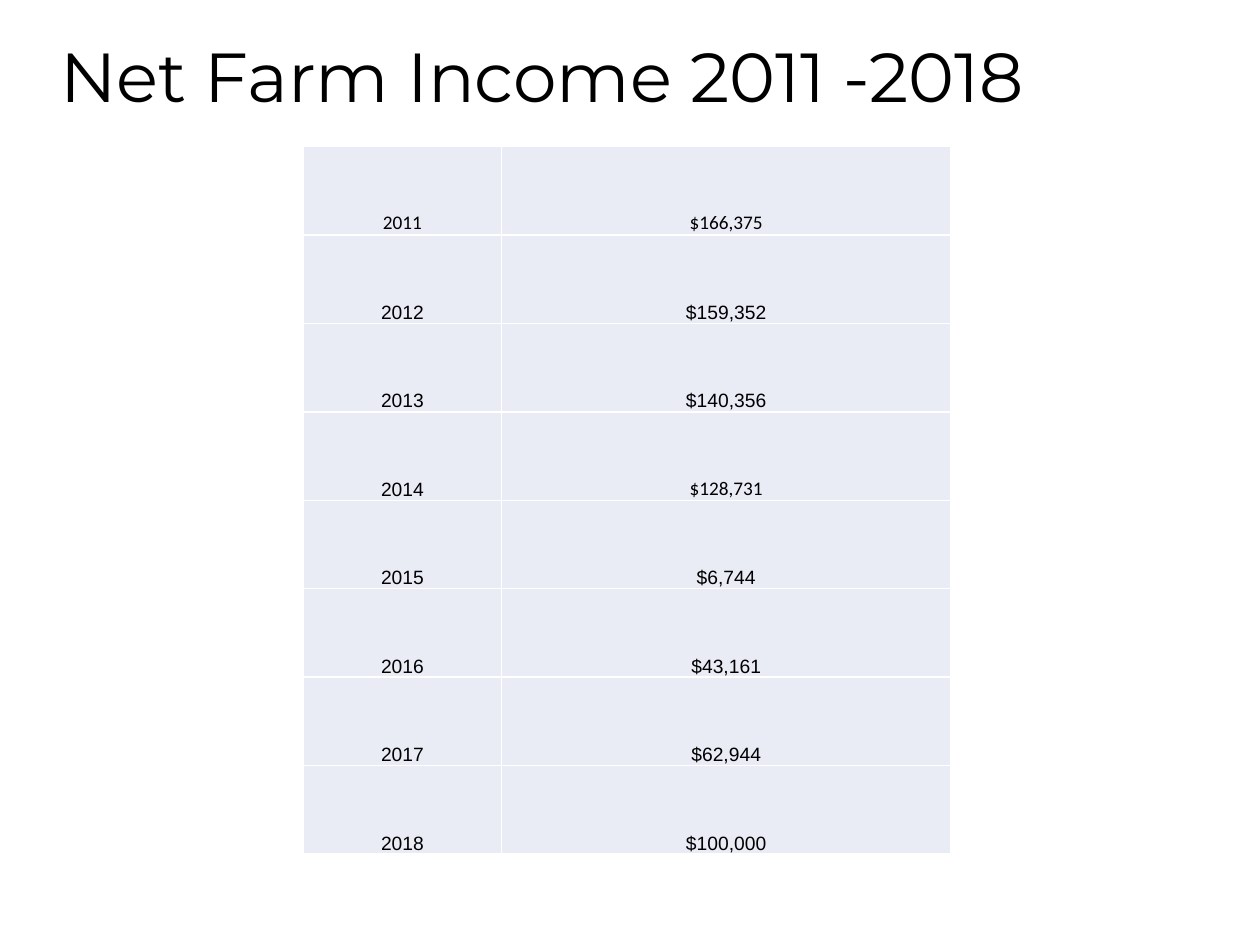
import pptx
import pptx.util
import pptx.dml.color
import pptx.enum.text
import pptx.oxml
import pptx.oxml.ns

Pt = pptx.util.Pt
enum = pptx.enum.text

title = "Net Farm Income 2011 -2018"
rows = [
    ("2011", "$166,375"),
    ("2012", "$159,352"),
    ("2013", "$140,356"),
    ("2014", "$128,731"),
    ("2015", "$6,744"),
    ("2016", "$43,161"),
    ("2017", "$62,944"),
    ("2018", "$100,000"),
]
light = {"2011", "$166,375", "$128,731"}
widths = [113, 257]
high = 50.55
colors = {"text": "000000", "cell": "E9EBF5", "edge": "FFFFFF"}


def rgb(name):
    return pptx.dml.color.RGBColor.from_string(colors[name])


def style(para, face, size, align):
    para.alignment = align
    para.font.name = face
    para.font.size = Pt(size)
    para.font.color.rgb = rgb("text")


def edge(cell):
    props = cell._tc.get_or_add_tcPr()
    for side in ("lnL", "lnR", "lnT", "lnB"):
        props.append(pptx.oxml.parse_xml(
            f'<a:{side} {pptx.oxml.ns.nsdecls("a")} w="{Pt(1)}"><a:solidFill>'
            f'<a:srgbClr val="{colors["edge"]}"/></a:solidFill></a:{side}>'))


def write(cell, text):
    edge(cell)
    cell.fill.solid()
    cell.fill.fore_color.rgb = rgb("cell")
    cell.margin_left = cell.margin_right = cell.margin_bottom = 0
    cell.margin_top = Pt(0.7)
    cell.vertical_anchor = enum.MSO_ANCHOR.BOTTOM
    cell.text = text
    face = "Calibri" if text in light else "Arial"
    style(cell.text_frame.paragraphs[0], face, 11, enum.PP_ALIGN.CENTER)


def main():
    deck = pptx.Presentation()
    deck.slide_width, deck.slide_height = Pt(720), Pt(540)
    slide = deck.slides.add_slide(deck.slide_layouts[5])

    head = slide.shapes.title
    head.left, head.top, head.width, head.height = Pt(27.4), 0, Pt(667.4), Pt(92)
    frame = head.text_frame
    frame.text = title
    frame.auto_size = enum.MSO_AUTO_SIZE.NONE
    frame.vertical_anchor = enum.MSO_ANCHOR.MIDDLE
    para = frame.paragraphs[0]
    para.line_spacing = 0.9
    style(para, "Montserrat", 39.6, enum.PP_ALIGN.LEFT)

    table = slide.shapes.add_table(
        len(rows), len(widths), Pt(173.5), Pt(83.7),
        Pt(sum(widths)), Pt(high * len(rows))).table
    table.first_row = table.horz_banding = False
    for col, width in zip(table.columns, widths):
        col.width = Pt(width)
    for line, texts in zip(table.rows, rows):
        line.height = Pt(high)
        for cell, text in zip(line.cells, texts):
            write(cell, text)

    deck.save("out.pptx")


if __name__ == "__main__":
    main()
